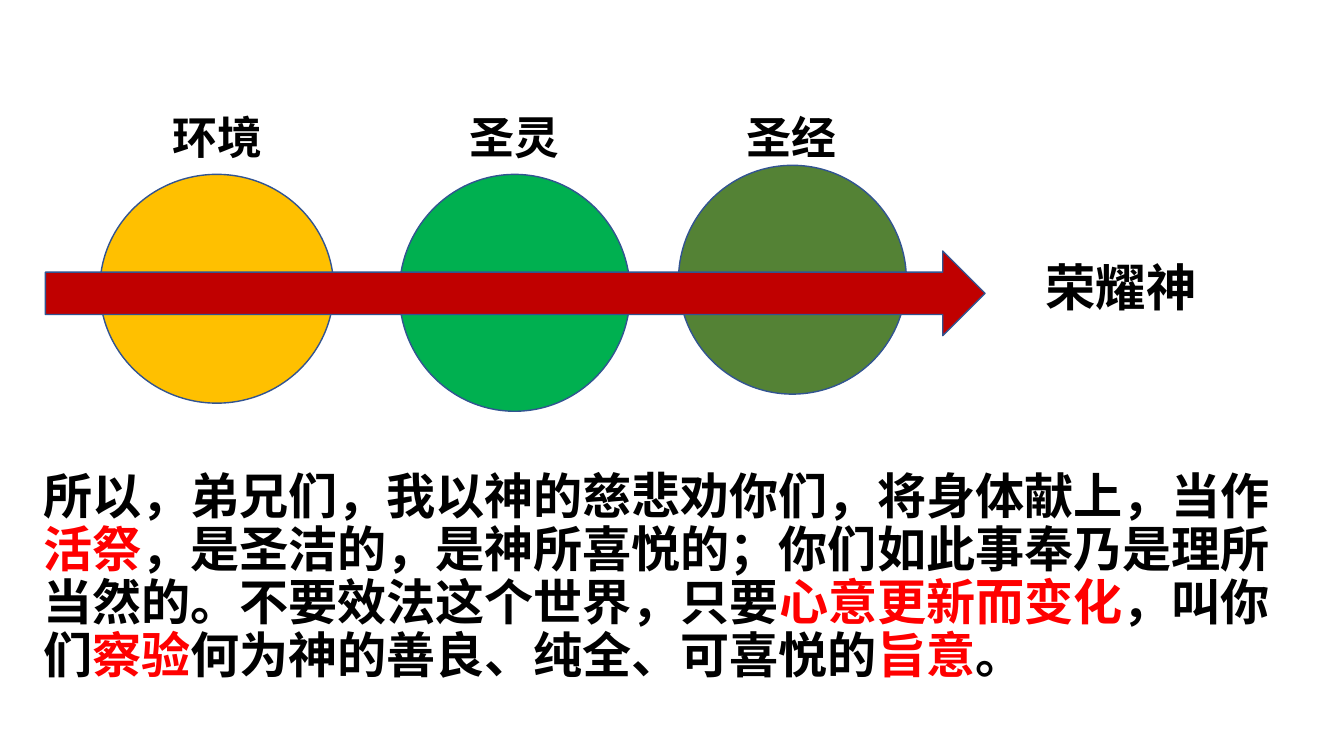
from pptx import Presentation
from pptx import util as u
from pptx.dml.color import RGBColor
from pptx.enum import shapes, text

COLORS = {
    "black": "000000",
    "red": "FF0000",
    "arrow": "C00000",
    "outline": "325491",
    "amber": "FFC000",
    "green": "00B050",
    "olive": "548235",
}


class SlideBuilder:
    """Holds the style and the current slide."""

    font_name = "Calibri"

    def __init__(self, slide):
        self.slide = slide

    def color(self, name):
        return RGBColor.from_string(COLORS[name])

    def add_shape(self, kind, box, fill):
        shape = self.slide.shapes.add_shape(kind, *map(u.Inches, box))
        shape.shadow.inherit = False
        shape.fill.solid()
        shape.fill.fore_color.rgb = self.color(fill)
        shape.line.color.rgb = self.color("outline")
        shape.line.width = u.Pt(1)

    def add_text(self, box, runs, size, wrap=False, line_spacing=None):
        frame = self.slide.shapes.add_textbox(*map(u.Inches, box)).text_frame
        frame.word_wrap = wrap
        if not wrap:
            frame.auto_size = text.MSO_AUTO_SIZE.SHAPE_TO_FIT_TEXT
        paragraph = frame.paragraphs[0]
        paragraph.line_spacing = line_spacing
        for content, color in runs:
            run = paragraph.add_run()
            run.text = content
            run.font.name = self.font_name
            run.font.size = u.Pt(size)
            run.font.bold = True
            run.font.color.rgb = self.color(color)


def main():
    presentation = Presentation()
    presentation.slide_width = u.Inches(13.33)
    presentation.slide_height = u.Inches(7.5)
    slide = presentation.slides.add_slide(presentation.slide_layouts[6])
    builder = SlideBuilder(slide)

    # Circles
    circles = [
        ((6.73, 1.64, 2.26, 2.27), "olive"),
        ((3.96, 1.73, 2.29, 2.35), "green"),
        ((0.99, 1.73, 2.32, 2.27), "amber"),
    ]
    for box, fill in circles:
        builder.add_shape(shapes.MSO_SHAPE.OVAL, box, fill)

    # Arrow across the circles
    builder.add_shape(shapes.MSO_SHAPE.RIGHT_ARROW, (0.45, 2.49, 9.32, 0.84), "arrow")

    # Circle labels and the goal
    for label, left in [("环境", 1.61), ("圣灵", 4.56), ("圣经", 7.31)]:
        builder.add_text((left, 1.04, 1.1, 0.64), [(label, "black")], 32)
    builder.add_text((10.27, 2.49, 1.72, 0.71), [("荣耀神", "black")], 36)

    # Verse with key words in red
    verse = [
        ("所以，弟兄们，我以神的慈悲劝你们，将身体献上，当作", "black"),
        ("活祭", "red"),
        ("，是圣洁的，是神所喜悦的；你们如此事奉乃是理所当然的。不要效法这个世界，只要", "black"),
        ("心意更新而变化", "red"),
        ("，叫你们", "black"),
        ("察验", "red"),
        ("何为神的善良、纯全、可喜悦的", "black"),
        ("旨意", "red"),
        ("。", "black"),
    ]
    builder.add_text((0.33, 4.63, 12.5, 2.87), verse, 35.1, wrap=True, line_spacing=0.9)

    presentation.save("out.pptx")


if __name__ == "__main__":
    main()
